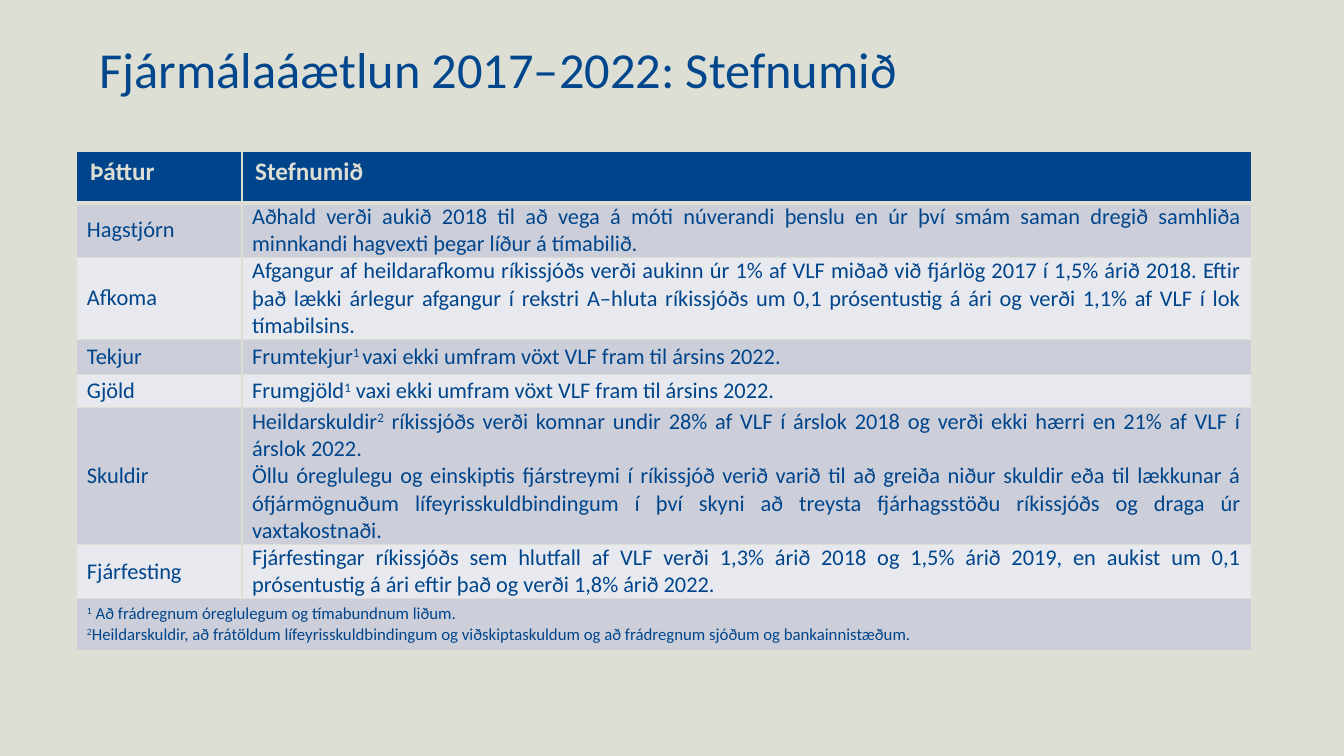
from dataclasses import dataclass

from lxml import etree
from pptx import Presentation
from pptx.dml.color import RGBColor
from pptx.enum.text import MSO_ANCHOR, PP_ALIGN
from pptx.oxml.ns import qn
from pptx.util import Pt

LEFT, JUSTIFY = PP_ALIGN.LEFT, PP_ALIGN.JUSTIFY
TOP, MIDDLE = MSO_ANCHOR.TOP, MSO_ANCHOR.MIDDLE

SAND = RGBColor(0xDD, 0xDE, 0xD4)
TITLE_BLUE = RGBColor(0x00, 0x46, 0x8C)
TABLE_BLUE = RGBColor(0x00, 0x45, 0x8B)
BANDS = (RGBColor(0xCC, 0xCF, 0xDA), RGBColor(0xE7, 0xE9, 0xEE))
FONT = "Calibri"
MARK = "^"  # encloses superscript text


@dataclass(frozen=True)
class Goal:
    topic: str
    lines: tuple[str, ...]
    height: float
    anchor: MSO_ANCHOR = TOP


@dataclass(frozen=True)
class CellStyle:
    size: float
    color: RGBColor
    fill: RGBColor
    bold: bool = False
    side_margin: float = 7.2
    end_margin: float = 0
    top_border: float = 1
    bottom_border: float = 1


GOALS = (
    Goal("Hagstjórn", (
        "Aðhald verði aukið 2018 til að vega á móti núverandi þenslu en úr því smám saman "
        "dregið samhliða minnkandi hagvexti þegar líður á tímabilið.",), 39),
    Goal("Afkoma", (
        "Afgangur af heildarafkomu ríkissjóðs verði aukinn úr 1% af VLF miðað við fjárlög 2017 "
        "í 1,5% árið 2018. Eftir það lækki árlegur afgangur í rekstri A–hluta ríkissjóðs um "
        "0,1 prósentustig á ári og verði 1,1% af VLF í lok tímabilsins.",), 58.5),
    Goal("Tekjur", (
        "Frumtekjur^1 ^vaxi ekki umfram vöxt VLF fram til ársins 2022.",), 25.2, MIDDLE),
    Goal("Gjöld", (
        "Frumgjöld^1^ vaxi ekki umfram vöxt VLF fram til ársins 2022.",), 23.8, MIDDLE),
    Goal("Skuldir", (
        "Heildarskuldir^2^ ríkissjóðs verði komnar undir 28% af VLF í árslok 2018 og verði ekki "
        "hærri en 21% af VLF í árslok 2022.",
        "Öllu óreglulegu og einskiptis fjárstreymi í ríkissjóð verið varið til að greiða niður "
        "skuldir eða til lækkunar á ófjármögnuðum lífeyrisskuldbindingum í því skyni að treysta "
        "fjárhagsstöðu ríkissjóðs og draga úr vaxtakostnaði."), 97.5),
    Goal("Fjárfesting", (
        "Fjárfestingar ríkissjóðs sem hlutfall af VLF verði 1,3% árið 2018 og 1,5% árið 2019, "
        "en aukist um 0,1 prósentustig á ári eftir það og verði 1,8% árið 2022.",), 39),
)
FOOTNOTES = (
    "^1^ Að frádregnum óreglulegum og tímabundnum liðum.",
    "^2^Heildarskuldir, að frátöldum lífeyrisskuldbindingum og viðskiptaskuldum og að "
    "frádregnum sjóðum og bankainnistæðum.",
)
HEADINGS = ("Þáttur", "Stefnumið")
COLUMN_WIDTHS = (118, 721)
HEADER_HEIGHT = 36.5
FOOTNOTE_HEIGHT = 36.7


def format_font(font, size: float, color: RGBColor, bold: bool = False) -> None:
    font.name = FONT
    font.size = Pt(size)
    font.bold = bold
    font.color.rgb = color


def add_borders(cell, style: CellStyle) -> None:
    properties = cell._tc.get_or_add_tcPr()
    widths = (("lnL", 1), ("lnR", 1), ("lnT", style.top_border), ("lnB", style.bottom_border))
    for position, (tag, width) in enumerate(widths):
        line = etree.Element(qn(f"a:{tag}"), w=str(Pt(width)))
        fill = etree.SubElement(line, qn("a:solidFill"))
        etree.SubElement(fill, qn("a:srgbClr"), val=str(SAND))
        properties.insert(position, line)


def format_cell(cell, style: CellStyle, anchor: MSO_ANCHOR) -> None:
    cell.fill.solid()
    cell.fill.fore_color.rgb = style.fill
    cell.margin_left = cell.margin_right = Pt(style.side_margin)
    cell.margin_top = cell.margin_bottom = Pt(style.end_margin)
    cell.vertical_anchor = anchor
    add_borders(cell, style)


def write_cell(cell, lines: tuple[str, ...], style: CellStyle,
               anchor: MSO_ANCHOR, alignment: PP_ALIGN = LEFT) -> None:
    format_cell(cell, style, anchor)
    frame = cell.text_frame
    frame.text = "\n".join(line.replace(MARK, "") for line in lines)
    for paragraph, line in zip(frame.paragraphs, lines):
        paragraph.alignment = alignment
        if MARK in line:
            paragraph.clear()
            for index, part in enumerate(line.split(MARK)):
                if part:
                    run = paragraph.add_run()
                    run.text = part
                    if index % 2:
                        run._r.get_or_add_rPr().set("baseline", "30000")
        for run in paragraph.runs:
            format_font(run.font, style.size, style.color, style.bold)


def add_title(slide, text: str) -> None:
    box = slide.shapes.add_textbox(Pt(64), Pt(28.8), Pt(829.5), Pt(77))
    frame = box.text_frame
    frame.word_wrap = True
    frame.vertical_anchor = TOP
    frame.text = text
    paragraph = frame.paragraphs[0]
    paragraph.line_spacing = 0.9
    format_font(paragraph.runs[0].font, 36, TITLE_BLUE)


def add_goal_table(slide) -> None:
    heights = (HEADER_HEIGHT, *(goal.height for goal in GOALS), FOOTNOTE_HEIGHT)
    table = slide.shapes.add_table(
        len(heights), len(COLUMN_WIDTHS), Pt(54.9), Pt(108.3),
        Pt(sum(COLUMN_WIDTHS)), Pt(sum(heights))).table
    for column, width in zip(table.columns, COLUMN_WIDTHS):
        column.width = Pt(width)
    for row, height in zip(table.rows, heights):
        row.height = Pt(height)

    # Header row
    header = CellStyle(18, SAND, TABLE_BLUE, bold=True, side_margin=9.4,
                       end_margin=3.6, bottom_border=3)
    for column, heading in enumerate(HEADINGS):
        write_cell(table.cell(0, column), (heading,), header, TOP)

    # Goal rows in alternating bands
    for row, goal in enumerate(GOALS, start=1):
        style = CellStyle(16, TABLE_BLUE, BANDS[(row - 1) % 2], top_border=3 if row == 1 else 1)
        write_cell(table.cell(row, 0), (goal.topic,), style, MIDDLE)
        write_cell(table.cell(row, 1), goal.lines, style, goal.anchor, JUSTIFY)

    # Footnotes across both columns
    last = len(heights) - 1
    footnote = CellStyle(12, TABLE_BLUE, BANDS[0])
    table.cell(last, 0).merge(table.cell(last, 1))
    write_cell(table.cell(last, 0), FOOTNOTES, footnote, MIDDLE)
    format_cell(table.cell(last, 1), footnote, MIDDLE)


def main() -> None:
    presentation = Presentation()
    presentation.slide_width, presentation.slide_height = Pt(960), Pt(540)
    slide = presentation.slides.add_slide(presentation.slide_layouts[6])
    slide.background.fill.solid()
    slide.background.fill.fore_color.rgb = SAND
    add_title(slide, "Fjármálaáætlun 2017–2022: Stefnumið")
    add_goal_table(slide)
    presentation.save("out.pptx")


if __name__ == "__main__":
    main()
